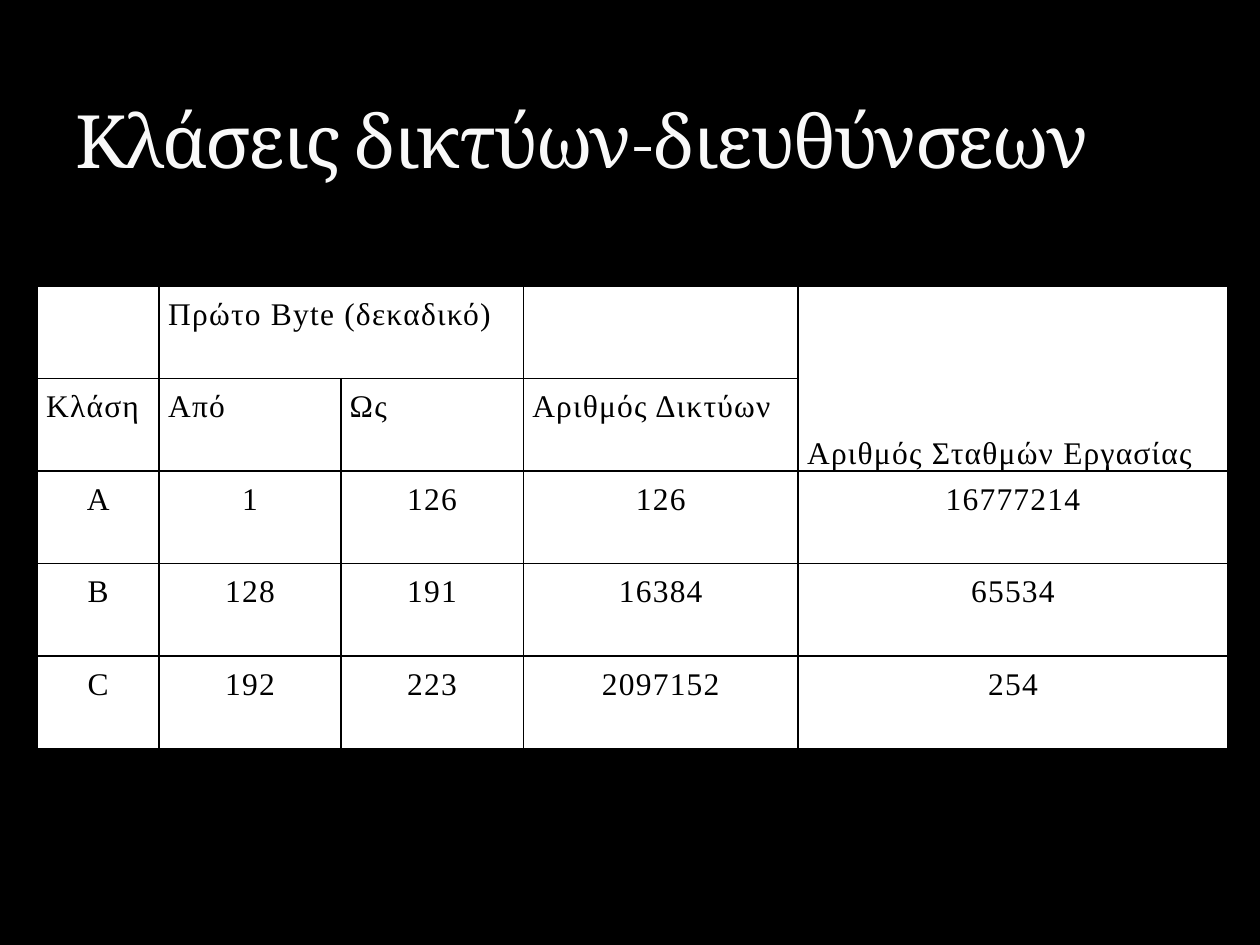
from lxml.etree import SubElement
from pptx import Presentation
from pptx.dml.color import RGBColor
from pptx.enum.text import MSO_ANCHOR, PP_ALIGN
from pptx.oxml import parse_xml
from pptx.oxml.ns import nsdecls, qn
from pptx.util import Cm, Pt

BLACK, WHITE = "000000", "FFFFFF"
WIDTHS = [2.46, 3.66, 3.68, 5.54, 8.66]
HEADS = [
    ["", "Πρώτο Byte (δεκαδικό)", "", "", "Αριθμός Σταθμών Εργασίας"],
    ["Κλάση", "Από", "Ως", "Αριθμός Δικτύων", ""],
]
CLASSES = [
    ["A", "1", "126", "126", "16777214"],
    ["B", "128", "191", "16384", "65534"],
    ["C", "192", "223", "2097152", "254"],
]


def color(code):
    return RGBColor.from_string(code)


def write(frame, text, face, size, code, gap):
    """Put one styled line in the frame; gap is letter spacing in points."""
    line = frame.paragraphs[0]
    run = line.add_run()
    run.text = text
    run._r.get_or_add_rPr().set("spc", str(round(gap * 100)))
    line.font.name = face
    line.font.size = Pt(size)
    line.font.color.rgb = color(code)
    return line


def border(cell):
    props = cell._tc.get_or_add_tcPr()
    for i, side in enumerate(("lnL", "lnR", "lnT", "lnB")):
        edge = parse_xml(f'<a:{side} {nsdecls("a")} w="{Pt(1)}"/>')
        fill = SubElement(edge, qn("a:solidFill"))
        SubElement(fill, qn("a:srgbClr")).set("val", BLACK)
        props.insert(i, edge)


def style(cell, text, align):
    cell.fill.solid()
    cell.fill.fore_color.rgb = color(WHITE)
    border(cell)
    cell.margin_left = cell.margin_right = Cm(0.18)
    cell.margin_top = cell.margin_bottom = 0
    if text:
        line = write(cell.text_frame, text, "Times New Roman", 18, BLACK, 0.7)
        line.alignment = align
        line.line_spacing = 1.32
        line.space_before = line.space_after = Pt(3)


def add_grid(slide, left, top, width, height):
    rows = HEADS + CLASSES
    grid = slide.shapes.add_table(
        len(rows), len(WIDTHS), Cm(left), Cm(top), Cm(width), Cm(height)
    ).table
    for col, size in zip(grid.columns, WIDTHS):
        col.width = Cm(size)
    for r, row in enumerate(rows):
        align = PP_ALIGN.JUSTIFY if r < len(HEADS) else PP_ALIGN.CENTER
        for c, text in enumerate(row):
            style(grid.cell(r, c), text, align)
    grid.cell(0, 1).merge(grid.cell(0, 2))
    hosts = grid.cell(0, 4)
    hosts.merge(grid.cell(1, 4))
    hosts.vertical_anchor = MSO_ANCHOR.BOTTOM


def add_title(slide, left, top, width, height):
    box = slide.shapes.add_textbox(Cm(left), Cm(top), Cm(width), Cm(height))
    frame = box.text_frame
    frame.word_wrap = True
    frame.vertical_anchor = MSO_ANCHOR.BOTTOM
    write(frame, "Κλάσεις δικτύων-διευθύνσεων", "Cambria", 42, "F9F9F9", -1)


def main():
    deck = Presentation()
    deck.slide_width, deck.slide_height = Cm(25.4), Cm(19.05)
    slide = deck.slides.add_slide(deck.slide_layouts[6])
    slide.background.fill.solid()
    slide.background.fill.fore_color.rgb = color(BLACK)
    add_grid(slide, 0.75, 5.77, sum(WIDTHS), 9.32)
    add_title(slide, 1.27, 0.43, 22.86, 3.38)
    deck.save("out.pptx")


if __name__ == "__main__":
    main()
